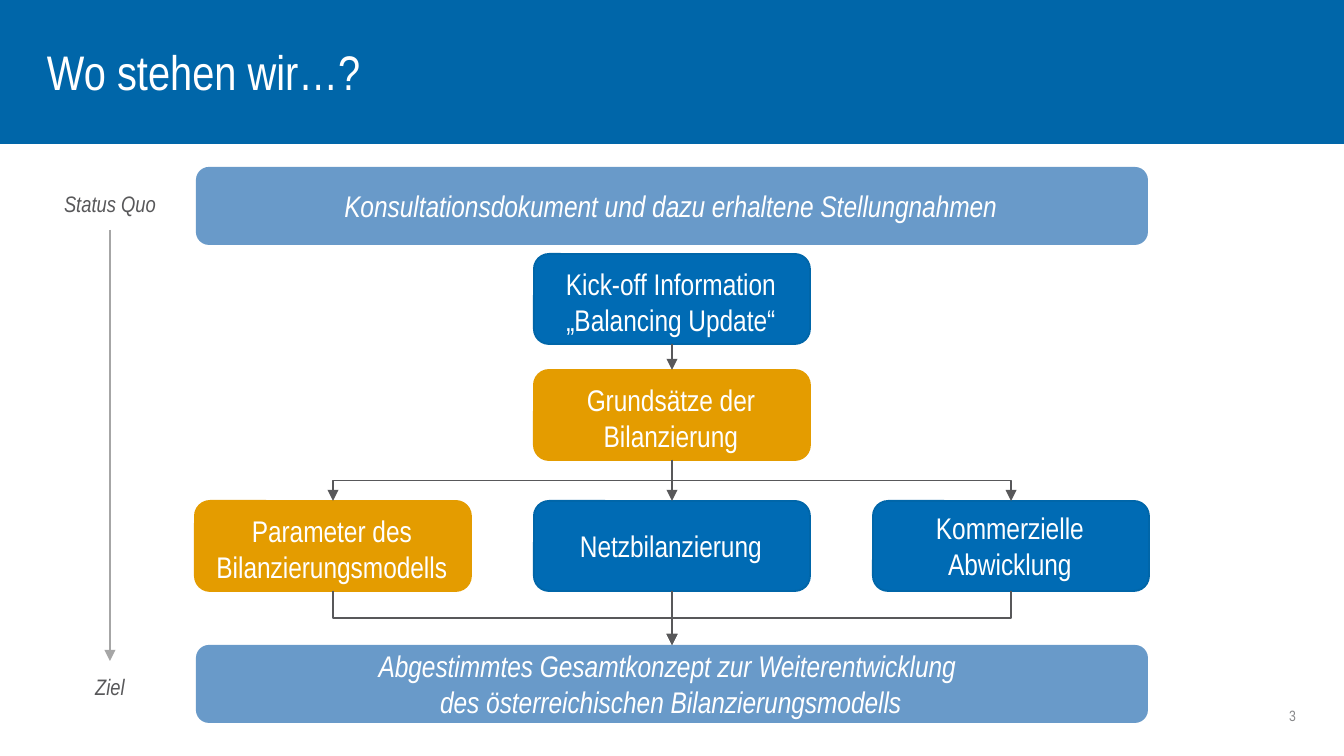
from dataclasses import dataclass

from lxml import etree
from pptx import Presentation
from pptx.dml.color import RGBColor
from pptx.enum import shapes, text
from pptx.oxml import ns
from pptx.util import Pt

SCALE = 9144000 / 1344
FONT = "Arial Narrow"
WHITE, BLUE, BORDER = "FFFFFF", "006BB4", "0066A9"
ORANGE, PALE, GREY = "E49C00", "699AC9", "58585A"
CENTER, STEP = 672, 339
BOX_W, BOX_H = 276, 90
BAR_W, BAR_H = 952, 78
TOP, MIDDLE = text.MSO_ANCHOR.TOP, text.MSO_ANCHOR.MIDDLE


@dataclass
class Box:
    center: int
    top: int
    lines: tuple
    fill: str
    line: str = ""
    anchor: int = MIDDLE
    w: int = BOX_W
    h: int = BOX_H
    italic: bool = False


@dataclass
class Label:
    left: int
    top: int
    w: int
    h: int
    words: str
    size: int
    color: str
    align: int = text.PP_ALIGN.CENTER
    italic: bool = True


def px(n: float) -> int:
    return round(n * SCALE)


def color(value: str) -> RGBColor:
    return RGBColor.from_string(value)


def write(sp, lines, size: int, hue: str, align, anchor, insets, italic=False) -> None:
    tf = sp.text_frame
    tf.word_wrap = True
    tf.auto_size = text.MSO_AUTO_SIZE.NONE
    tf.vertical_anchor = anchor
    tf.margin_left, tf.margin_top, tf.margin_right, tf.margin_bottom = map(px, insets)
    p = tf.paragraphs[0]
    p.alignment = align
    for i, line in enumerate(lines):
        if i:
            p.add_line_break()
        r = p.add_run()
        r.text = line
        r.font.name, r.font.size, r.font.italic = FONT, Pt(size), italic
        r.font.color.rgb = color(hue)


def add_block(s, kind, left: int, top: int, w: int, h: int, fill: str, line: str):
    sp = s.shapes.add_shape(kind, px(left), px(top), px(w), px(h))
    sp.shadow.inherit = False
    sp.fill.solid()
    sp.fill.fore_color.rgb = color(fill)
    if line:
        sp.line.color.rgb = color(line)
        sp.line.width = Pt(1)
    else:
        sp.line.fill.background()
    return sp


def add_box(s, box: Box):
    sp = add_block(s, shapes.MSO_SHAPE.ROUNDED_RECTANGLE, box.center - box.w // 2,
                   box.top, box.w, box.h, box.fill, box.line)
    write(sp, box.lines, 16, WHITE, text.PP_ALIGN.CENTER, box.anchor,
          (11, 7, 13, 7), box.italic)
    return sp


def add_label(s, label: Label):
    sp = s.shapes.add_textbox(px(label.left), px(label.top), px(label.w), px(label.h))
    write(sp, [label.words], label.size, label.color, label.align, MIDDLE,
          (0, 0, 0, 0), label.italic)
    return sp


def style_arrow(cxn, hue: str) -> None:
    cxn.line.color.rgb = color(hue)
    cxn.line.width = Pt(0.75)
    ln = cxn.line._get_or_add_ln()
    etree.SubElement(ln, ns.qn("a:tailEnd"), type="triangle")
    etree.SubElement(cxn._element.spPr, ns.qn("a:effectLst"))


def add_arrow(s, start, end, hue: str = GREY) -> None:
    cxn = s.shapes.add_connector(shapes.MSO_CONNECTOR.STRAIGHT, 0, 0, 0, 0)
    cxn.begin_connect(start, 2)
    cxn.end_connect(end, 0)
    style_arrow(cxn, hue)


def add_elbow(s, start, end) -> None:
    x1, y1 = start.left + start.width // 2, start.top + start.height
    x2, y2 = end.left + end.width // 2, end.top
    w, h = y2 - y1, abs(x2 - x1)
    left, top = (x1 + x2 - w) // 2, (y1 + y2 - h) // 2
    cxn = s.shapes.add_connector(shapes.MSO_CONNECTOR.ELBOW, left, top, left + w, top + h)
    xfrm = cxn._element.spPr.find(ns.qn("a:xfrm"))
    if x2 > x1:
        xfrm.set("rot", str(270 * 60000))
        xfrm.set("flipH", "1")
    else:
        xfrm.set("rot", str(90 * 60000))
    style_arrow(cxn, GREY)


def main() -> None:
    prs = Presentation()
    prs.slide_width, prs.slide_height = px(1344), px(756)
    s = prs.slides.add_slide(prs.slide_layouts[5])

    band = add_block(s, shapes.MSO_SHAPE.RECTANGLE, 0, 0, 1344, 143, BORDER, BORDER)
    title = s.shapes.title
    band._element.addnext(title._element)
    title.left, title.top, title.width, title.height = map(px, (47, 48, 978, 52))
    write(title, ["Wo stehen wir…?"], 26, WHITE, text.PP_ALIGN.LEFT, MIDDLE, (0, 0, 0, 5))

    add_box(s, Box(CENTER, 167, ("Konsultationsdokument und dazu erhaltene Stellungnahmen",),
                   PALE, w=BAR_W, h=BAR_H, italic=True))
    goal = add_box(s, Box(CENTER, 645, ("Abgestimmtes Gesamtkonzept zur Weiterentwicklung ",
                                        "des österreichischen Bilanzierungsmodells"),
                          PALE, w=BAR_W, h=BAR_H, italic=True))
    kickoff = add_box(s, Box(CENTER, 254, ("Kick-off Information", "„Balancing Update“"),
                             BLUE, BORDER, TOP))
    principles = add_box(s, Box(CENTER, 370, ("Grundsätze der Bilanzierung",),
                                ORANGE, ORANGE, TOP))
    parameters, network, commercial = [add_box(s, box) for box in (
        Box(CENTER - STEP, 501, ("Parameter des Bilanzierungsmodells",), ORANGE, ORANGE, TOP),
        Box(CENTER, 501, ("Netzbilanzierung",), BLUE, BORDER),
        Box(CENTER + STEP, 501, ("Kommerzielle Abwicklung",), BLUE, BORDER),
    )]

    for start, end in ((kickoff, principles), (principles, network), (network, goal)):
        add_arrow(s, start, end)
    for side in (parameters, commercial):
        add_elbow(s, principles, side)
        add_elbow(s, side, goal)

    status, target, _ = [add_label(s, label) for label in (
        Label(47, 178, 126, 52, "Status Quo", 12, GREY),
        Label(47, 661, 126, 52, "Ziel", 12, GREY),
        Label(1137, 702, 159, 27, "3", 8, "87888A", text.PP_ALIGN.RIGHT, False),
    )]
    add_arrow(s, status, target, "A6A6A6")

    prs.save("out.pptx")


if __name__ == "__main__":
    main()
